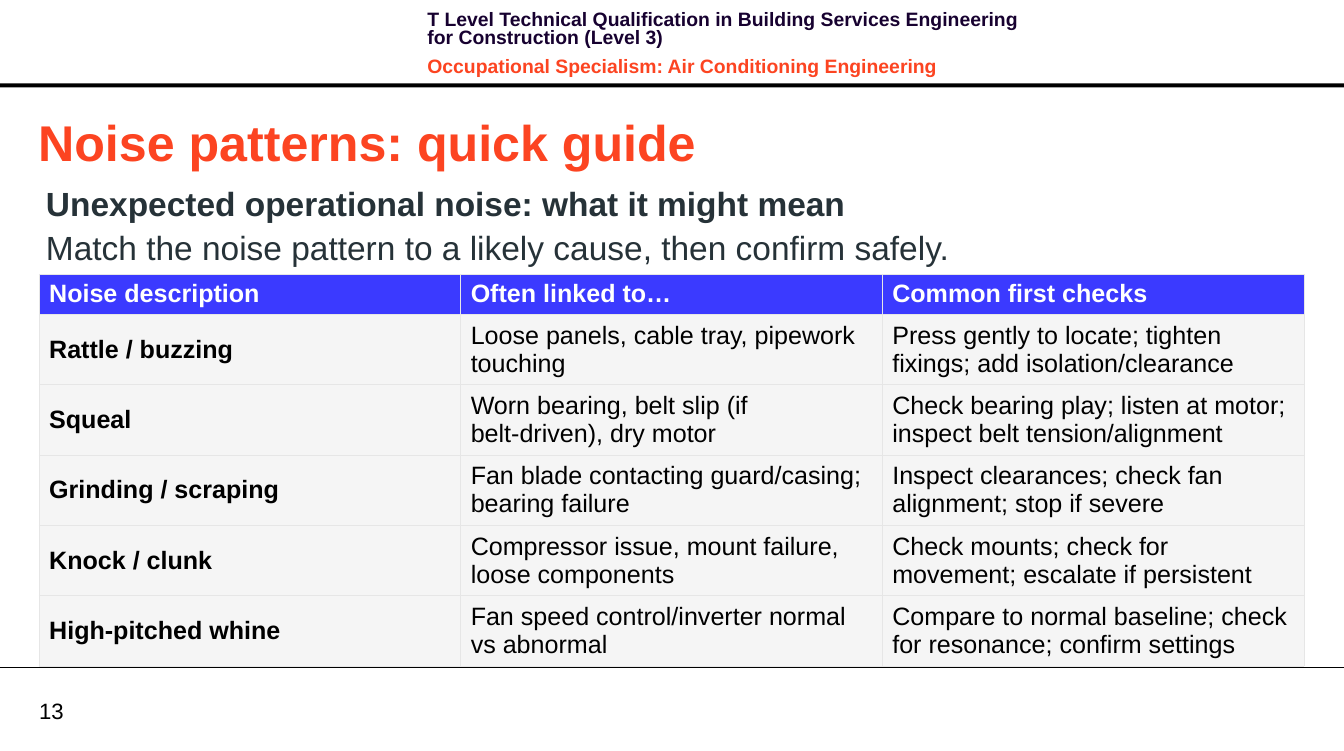
"""Build the noise patterns quick guide slide."""
from pptx import Presentation
from pptx.dml.color import RGBColor
from pptx.enum.shapes import MSO_CONNECTOR as Connector, MSO_SHAPE as Shape
from pptx.enum.text import MSO_ANCHOR as Anchor, MSO_AUTO_SIZE as AutoSize, PP_ALIGN as Align
from pptx.oxml import parse_xml
from pptx.oxml.ns import nsdecls
from pptx.util import Inches, Pt


def colour(hex_value):
    return RGBColor.from_string(hex_value)


def write(frame, lines, spacing=None, **frame_format):
    frame_format = {"word_wrap": True, "vertical_anchor": Anchor.TOP, **frame_format}
    for key, value in frame_format.items():
        setattr(frame, key, value)
    for index, (text, size, bold, ink) in enumerate(lines):
        paragraph = frame.add_paragraph() if index else frame.paragraphs[0]
        paragraph.text = text
        paragraph.alignment = Align.LEFT
        paragraph.font.color.rgb = colour(ink)
        for key, value in {"name": "Arial", "size": Pt(size), "bold": bold}.items():
            setattr(paragraph.font, key, value)
        for key, value in (spacing or {}).items():
            if index or key != "space_before":
                setattr(paragraph, key, value)


ORANGE, NAVY, SLATE, BLACK, WHITE = "FC4421", "170130", "263238", "000000", "FFFFFF"
BLUE, PALE, BORDER = "3B3AFF", "F5F5F5", "E6E6E6"

deck = Presentation()
deck.slide_width, deck.slide_height = Inches(13.39), Inches(7.48)
slide = deck.slides.add_slide(deck.slide_layouts[5])
shapes = slide.shapes

header_rule = shapes.add_shape(Shape.RECTANGLE, 0, Inches(0.83), Inches(13.39), Inches(0.04))
header_rule.shadow.inherit = False
header_rule.fill.solid()
header_rule.fill.fore_color.rgb = colour(BLACK)
header_rule.line.fill.background()

footer_rule = shapes.add_connector(
    Connector.STRAIGHT, 0, Inches(6.65), Inches(13.39), Inches(6.65))
footer_rule.line.color.rgb = colour(BLACK)
footer_rule.line.width = Pt(0.75)
footer_rule._element.spPr.append(parse_xml(f"<a:effectLst {nsdecls('a')}/>"))

course = shapes.add_textbox(Inches(4.16), Inches(0.07), Inches(6.13), Inches(0.64))
write(course.text_frame, [
    ("T Level Technical Qualification in Building Services Engineering "
     "for Construction (Level 3)", 13.9, True, NAVY),
    ("Occupational Specialism: Air Conditioning Engineering", 13.9, True, ORANGE),
], {"line_spacing": Pt(13), "space_before": Pt(4), "space_after": Pt(4)})

page_number = shapes.add_textbox(Inches(0.39), Inches(6.94), Inches(0.64), Inches(0.27))
write(page_number.text_frame, [("13", 15.9, False, BLACK)], vertical_anchor=Anchor.MIDDLE,
      margin_left=0, margin_right=0, margin_top=0, margin_bottom=0)

title = shapes.title
for side, length in {"left": 0.28, "top": 1.06, "width": 11.47, "height": 0.71}.items():
    setattr(title, side, Inches(length))
write(title.text_frame, [("Noise patterns: quick guide", 36, True, ORANGE)],
      auto_size=AutoSize.NONE)

intro = shapes.add_textbox(Inches(0.36), Inches(1.77), Inches(12.46), Inches(0.95))
write(intro.text_frame, [
    ("Unexpected operational noise: what it might mean", 24, True, SLATE),
    ("Match the noise pattern to a likely cause, then confirm safely.", 24, False, SLATE),
], {"space_after": Pt(3)})

noise_guide = [
    ("Noise description", "Often linked to…", "Common first checks"),
    ("Rattle / buzzing", "Loose panels, cable tray, pipework touching",
     "Press gently to locate; tighten fixings; add isolation/clearance"),
    ("Squeal", "Worn bearing, belt slip (if belt‑driven), dry motor",
     "Check bearing play; listen at motor; inspect belt tension/alignment"),
    ("Grinding / scraping", "Fan blade contacting guard/casing; bearing failure",
     "Inspect clearances; check fan alignment; stop if severe"),
    ("Knock / clunk", "Compressor issue, mount failure, loose components",
     "Check mounts; check for movement; escalate if persistent"),
    ("High‑pitched whine", "Fan speed control/inverter normal vs abnormal",
     "Compare to normal baseline; check for resonance; confirm settings"),
]
guide = shapes.add_table(len(noise_guide), 3, Inches(0.39), Inches(2.73),
                         Inches(12.6), Inches(3.9)).table
for column in guide.columns:
    column.width = Inches(4.2)
for row, entries in enumerate(noise_guide):
    is_header = row == 0
    guide.rows[row].height = Inches(0.4 if is_header else 0.7)
    for col, entry in enumerate(entries):
        cell = guide.cell(row, col)
        cell.vertical_anchor = Anchor.MIDDLE
        cell.fill.solid()
        cell.fill.fore_color.rgb = colour(BLUE if is_header else PALE)
        write(cell.text_frame,
              [(entry, 18, is_header or col == 0, WHITE if is_header else BLACK)])
        for position, edge in enumerate(("lnL", "lnR", "lnT", "lnB")):
            cell._tc.tcPr.insert(position, parse_xml(
                f'<a:{edge} {nsdecls("a")} w="{Pt(0.5)}"><a:solidFill>'
                f'<a:srgbClr val="{BORDER}"/></a:solidFill></a:{edge}>'))

deck.save("out.pptx")
